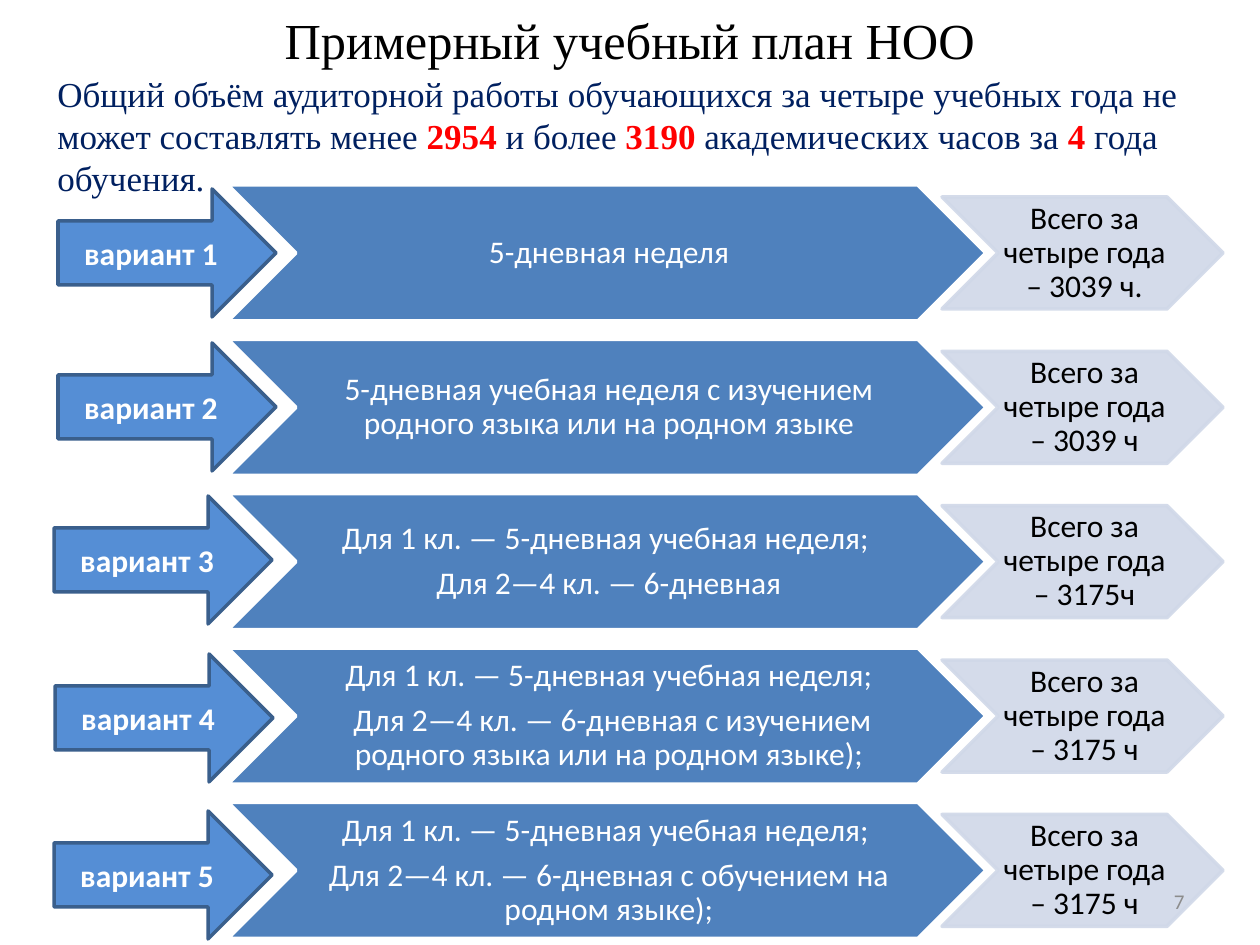
from dataclasses import dataclass

from lxml.etree import SubElement
from pptx import Presentation
from pptx.dml.color import RGBColor
from pptx.enum.shapes import MSO_SHAPE as Preset
from pptx.enum.text import MSO_ANCHOR as Anchor, PP_ALIGN as Align
from pptx.oxml.ns import qn
from pptx.util import Pt


@dataclass(frozen=True)
class Theme:
    heading_font: str = "Times New Roman"
    body_font: str = "Calibri"
    black: str = "000000"
    white: str = "FFFFFF"
    navy: str = "002060"
    red: str = "FF0000"
    gray: str = "8C8C8C"
    week_fill: str = "4F81BD"
    total_fill: str = "D0D8E8"
    arrow_fill: str = "558ED5"
    arrow_line: str = "3A5F8C"
    title_size: float = 28.8
    intro_size: float = 20
    body_size: float = 18
    number_size: float = 12


THEME = Theme()
EMU_PER_PX = 914400 / 126

# Intro runs: text, emphasised or not
INTRO = [
    ("Общий объём аудиторной работы обучающихся за четыре учебных года "
     "не может составлять менее ", False),
    ("2954 ", True), ("и более ", False), ("3190", True),
    (" академических часов за ", False), ("4", True),
    (" года обучения.", False),
]

# Variants: arrow left and top, study week paragraphs, total hours
FIRST_GRADE = "Для 1 кл. — 5-дневная учебная неделя;"
VARIANTS = [
    (58, 189, ["5-дневная неделя"], "3039 ч."),
    (58, 343, ["5-дневная учебная неделя с изучением родного языка "
               "или на родном языке"], "3039 ч"),
    (54, 496, [FIRST_GRADE + " ", "Для 2—4 кл. — 6-дневная"], "3175ч"),
    (55, 654, [FIRST_GRADE, " Для 2—4 кл. — 6-дневная с изучением родного "
               "языка или на родном языке);"], "3175 ч"),
    (54, 811, [FIRST_GRADE + " ", "Для 2—4 кл. — 6-дневная с обучением на "
               "родном языке);"], "3175 ч"),
]
ROW_LEFT, ROW_TOP, ROW_PITCH = 228, 185, 154.35


def px(value):
    return round(value * EMU_PER_PX)


def set_font(font, name, size, color, bold=False):
    font.name, font.size, font.bold = name, Pt(size), bold
    font.color.rgb = RGBColor.from_string(color)


def add_text_box(slide, box, anchor):
    frame = slide.shapes.add_textbox(*map(px, box)).text_frame
    frame.word_wrap = True
    frame.vertical_anchor = anchor
    return frame


def add_line(slide, box, text, align, name, size, color):
    """One line of text, centred vertically in its box."""
    paragraph = add_text_box(slide, box, Anchor.MIDDLE).paragraphs[0]
    paragraph.text = text
    paragraph.alignment = align
    set_font(paragraph.font, name, size, color)


def add_block(slide, preset, box, fill, line, texts, color, bold=False):
    """A filled preset shape with centred paragraphs."""
    shape = slide.shapes.add_shape(preset, *map(px, box))
    shape.shadow.inherit = False
    shape.fill.solid()
    shape.fill.fore_color.rgb = RGBColor.from_string(fill)
    shape.line.color.rgb = RGBColor.from_string(line)
    shape.line.width = Pt(2)
    frame = shape.text_frame
    frame.word_wrap = True
    frame.vertical_anchor = Anchor.MIDDLE
    for index, text in enumerate(texts):
        paragraph = frame.add_paragraph() if index else frame.paragraphs[0]
        paragraph.text = text
        paragraph.alignment = Align.CENTER
        set_font(paragraph.font, THEME.body_font, THEME.body_size, color, bold)
    return shape


def add_chevron(slide, box, fill, line, texts, color):
    shape = add_block(slide, Preset.CHEVRON, box, fill, line, texts, color)
    frame = shape.text_frame
    frame.margin_left, frame.margin_right = px(4), 0
    frame.margin_top = frame.margin_bottom = px(1)
    for paragraph in frame.paragraphs:
        paragraph.line_spacing = 0.9
        paragraph.space_after = Pt(6.3)
    return shape


def set_opacity(shape, percent):
    for color in shape._element.spPr.iter(qn("a:srgbClr")):
        SubElement(color, qn("a:alpha"), val=str(percent * 1000))


def add_intro(slide, box):
    paragraph = add_text_box(slide, box, Anchor.TOP).paragraphs[0]
    for text, emphasised in INTRO:
        run = paragraph.add_run()
        run.text = text
        set_font(run.font, THEME.heading_font, THEME.intro_size,
                 THEME.red if emphasised else THEME.navy, emphasised)


def add_variant_row(slide, left, top, weeks, hours):
    # Study week
    add_chevron(slide, (left, top, 758, 136), THEME.week_fill, THEME.white,
                weeks, THEME.white)
    # Total hours
    total = add_chevron(slide, (left + 714, top + 12, 281, 112),
                        THEME.total_fill, THEME.total_fill,
                        [f"Всего за четыре года – {hours}"], THEME.black)
    set_opacity(total, 90)


def add_variant_arrow(slide, left, top, number):
    add_block(slide, Preset.RIGHT_ARROW, (left, top, 218, 128),
              THEME.arrow_fill, THEME.arrow_line, [f"вариант {number}"],
              THEME.white, bold=True)


def main():
    presentation = Presentation()
    presentation.slide_width, presentation.slide_height = px(1260), px(945)
    slide = presentation.slides.add_slide(presentation.slide_layouts[6])

    # Title
    add_line(slide, (63, 4, 1134, 71), "Примерный учебный план НОО",
             Align.CENTER, THEME.heading_font, THEME.title_size, THEME.black)

    # Variants
    for index, (arrow_left, arrow_top, weeks, hours) in enumerate(VARIANTS):
        add_variant_row(slide, ROW_LEFT, ROW_TOP + index * ROW_PITCH,
                        weeks, hours)
        add_variant_arrow(slide, arrow_left, arrow_top, index + 1)

    # Slide number and intro
    add_line(slide, (903, 876, 294, 50), "7", Align.RIGHT,
             THEME.body_font, THEME.number_size, THEME.gray)
    add_intro(slide, (45, 66, 1211, 140))

    presentation.save("out.pptx")


if __name__ == "__main__":
    main()
